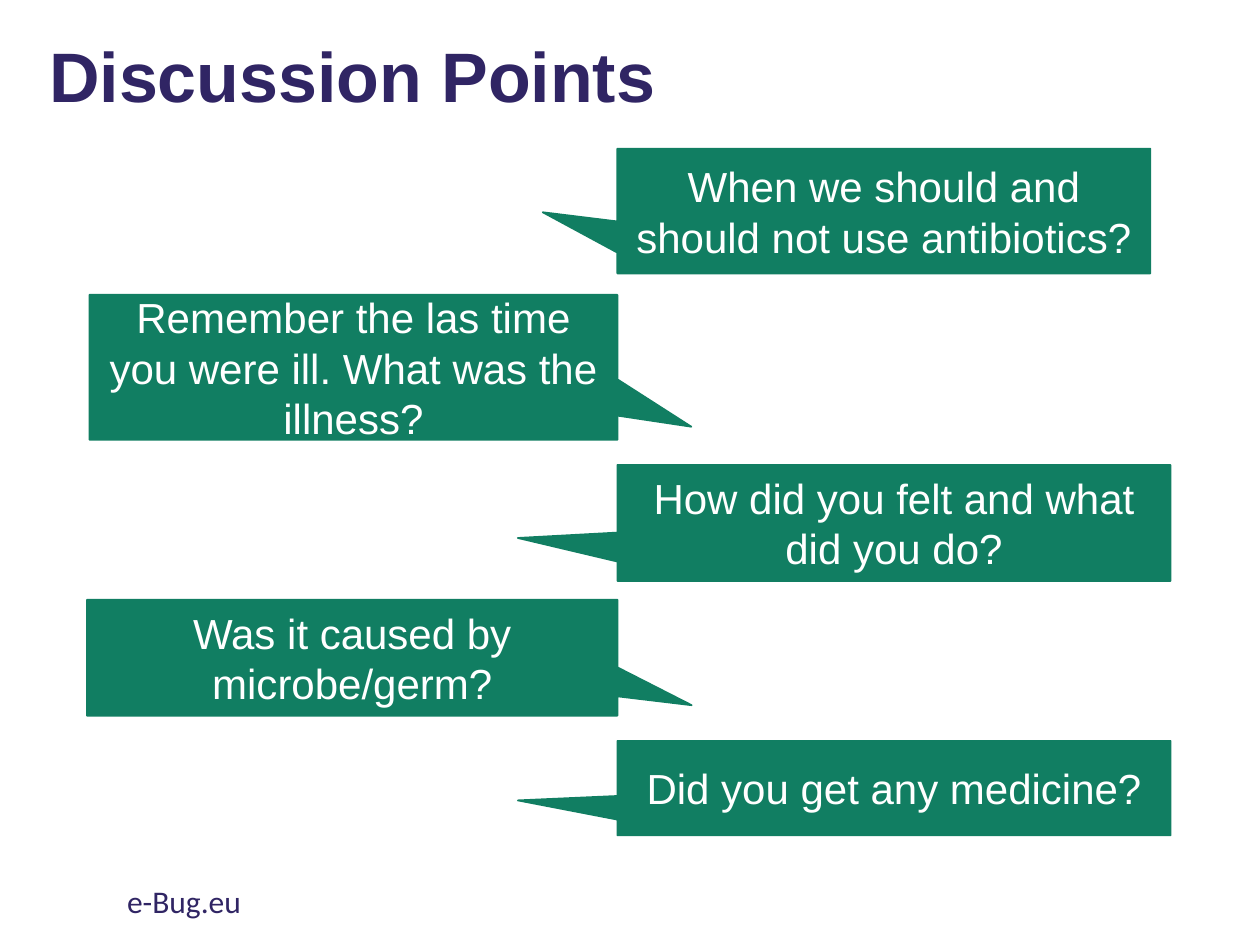
import pptx
import pptx.dml.color
import pptx.enum.shapes
import pptx.enum.text
import pptx.util
from pptx.util import Inches

GREEN, NAVY, WHITE = "117E62", "302564", "FFFFFF"
MIDDLE = pptx.enum.text.MSO_ANCHOR.MIDDLE


def color(hex_code):
    return pptx.dml.color.RGBColor.from_string(hex_code)


def write(frame, text, size, ink, font="Arial", bold=False, align="LEFT",
          anchor=pptx.enum.text.MSO_ANCHOR.TOP, spacing=None):
    frame.word_wrap = True
    frame.auto_size = pptx.enum.text.MSO_AUTO_SIZE.NONE
    frame.vertical_anchor = anchor
    paragraph = frame.paragraphs[0]
    paragraph.alignment = pptx.enum.text.PP_ALIGN[align]
    paragraph.line_spacing = spacing
    run = paragraph.add_run()
    run.text = text
    run.font.name = font
    run.font.size = pptx.util.Pt(size)
    run.font.bold = bold
    run.font.color.rgb = color(ink)


class DiscussionSlide:
    """Holds the slide and its style."""

    def __init__(self, deck):
        self.slide = deck.slides.add_slide(deck.slide_layouts[5])

    def title(self, text, left, top, width, height):
        heading = self.slide.shapes.title
        heading.left, heading.top = Inches(left), Inches(top)
        heading.width, heading.height = Inches(width), Inches(height)
        write(heading.text_frame, text, 40, NAVY, bold=True, anchor=MIDDLE, spacing=0.9)

    def callout(self, text, left, top, width, height, tip):
        """Add a speech box; tip is the pointer's offset from its centre, in box sizes."""
        bubble = self.slide.shapes.add_shape(
            pptx.enum.shapes.MSO_SHAPE.RECTANGULAR_CALLOUT,
            Inches(left), Inches(top), Inches(width), Inches(height))
        bubble.adjustments[0], bubble.adjustments[1] = tip
        bubble.shadow.inherit = False
        bubble.fill.solid()
        bubble.fill.fore_color.rgb = color(GREEN)
        bubble.line.color.rgb = color(GREEN)
        bubble.line.width = pptx.util.Pt(1)
        write(bubble.text_frame, text, 24, WHITE, align="CENTER", anchor=MIDDLE)

    def footer(self, text, left, top, width, height):
        box = self.slide.shapes.add_textbox(
            Inches(left), Inches(top), Inches(width), Inches(height))
        write(box.text_frame, text, 18, NAVY, font="Calibri")


def main():
    deck = pptx.Presentation()
    deck.slide_width, deck.slide_height = Inches(10), Inches(7.5)
    page = DiscussionSlide(deck)
    page.title("Discussion Points", 0.29, -0.09, 8.62, 1.45)

    middle = 4.9  # questions alternate right and left of this line
    to_left, to_right = (-0.68, 0.13), (0.64, 0.41)
    questions = [
        ("When we should and should not use antibiotics?", middle, 1.18, 4.23, 0.99, (-0.64, 0.01)),
        ("Remember the las time you were ill. What was the illness?",
         middle - 4.19, 2.34, 4.19, 1.15, to_right),
        ("How did you felt and what did you do?", middle, 3.69, 4.39, 0.92, to_left),
        ("Was it caused by microbe/germ?", middle - 4.21, 4.76, 4.21, 0.92, to_right),
        ("Did you get any medicine?", middle, 5.88, 4.39, 0.75, to_left),
    ]
    for question in questions:
        page.callout(*question)

    page.footer("e-Bug.eu", 0.91, 6.95, 3.38, 0.4)
    deck.save("out.pptx")


if __name__ == "__main__":
    main()
